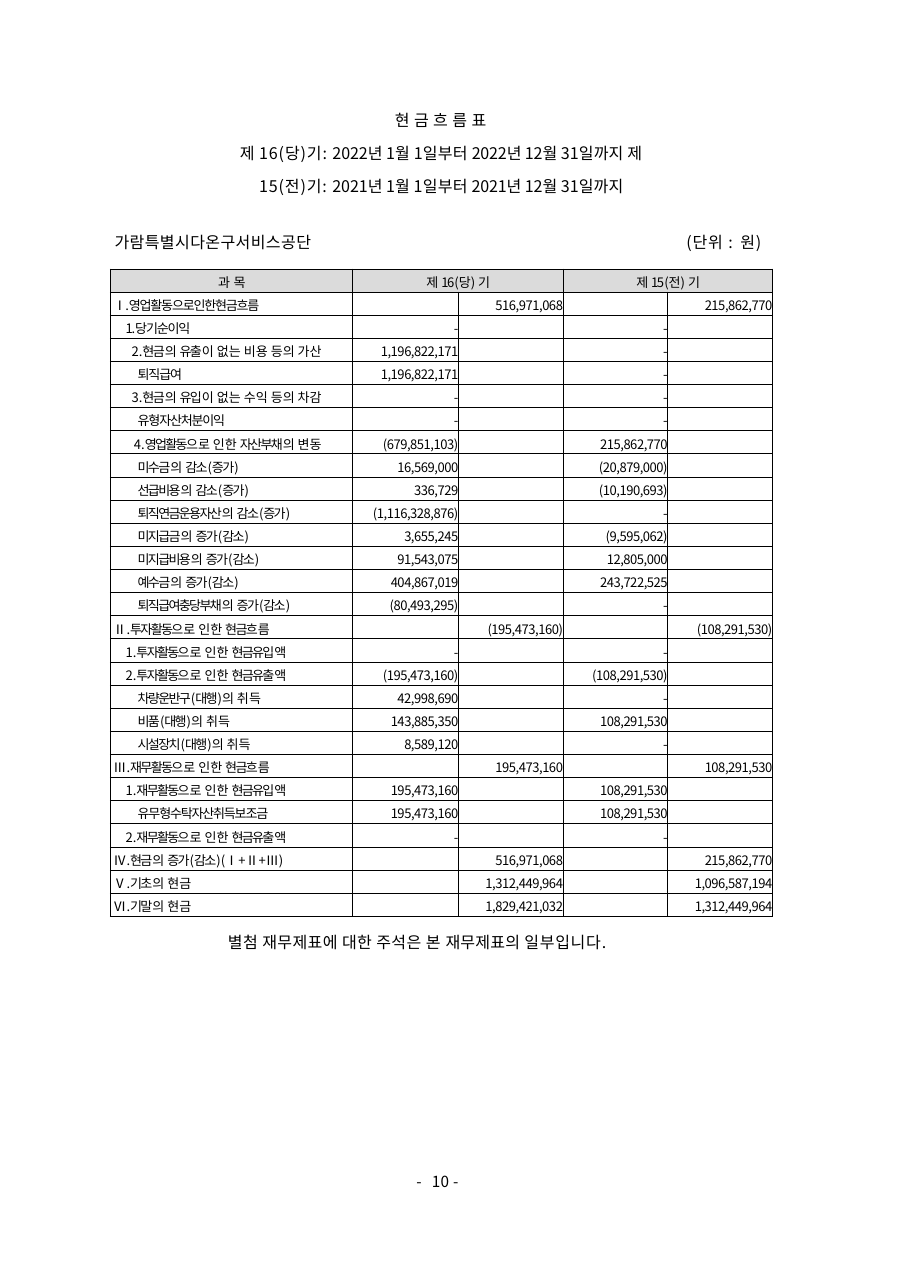
from lxml.etree import SubElement
from pptx import Presentation
from pptx.dml.color import RGBColor
from pptx.enum.text import MSO_AUTO_SIZE, PP_ALIGN
from pptx.oxml import parse_xml
from pptx.oxml.ns import nsdecls, qn
from pptx.util import Inches, Pt

# Content: text runs are (text, letter spacing in points)
FONT = "Noto Sans CJK KR"
COLORS = {"ink": "000000", "head": "DBDBDB"}
TITLE = [("현 금 흐 름 표", 0.3)]
TERMS = [
    ("제 ", 0.3), ("16(당)기: ", 0.6), ("2022년 ", 0), ("1월 ", 0.1),
    ("1일부터 ", 0.2), ("2022년 ", -0.1), ("12월 ", 0), ("31일까지 ", 0.1),
    ("제 ", 0.3), ("15(전)기: ", 0.6), ("2021년 ", 0), ("1월 ", 0.1),
    ("1일부터 ", 0.2), ("2021년 ", -0.1), ("12월 ", 0), ("31일까지", 0.1),
]
OWNER = [("가람특별시다온구서비스공단", 0.3)]
UNIT = [("(단위 ", 0.6), (": ", 1.3), ("원)", 0.6)]
NOTE = [("별첨 재무제표에 대한 주석은 본 ", 0.3), ("재무제표의 ", 0.2), ("일부입니다.", 0.5)]
PAGE = [("- ", 2.2), ("10 ", 0.2), ("-", 2.2)]

# Table: a bar splits a label into separately spaced runs
HEADS = [(0, "과 목"), (1, "제 |1|6|(|당|) 기"), (3, "제 |1|5|(|전|) 기")]
# Level 0 heading, 1 item, 2 detail, "R" item set from the right; then this and last term
ROWS = [
    (0, "Ⅰ.영업활동으로인한현금흐름", "516,971,068", "215,862,770"),
    (1, "1.당기순이익", "-", "-"),
    ("R", "2|.|현|금|의 |유출|이 |없|는 |비|용 |등|의 |가|산", "1,196,822,171", "-"),
    (2, "퇴직급여", "1,196,822,171", "-"),
    ("R", "3|.|현|금|의 |유입|이 |없|는 |수|익 |등|의 |차|감", "-", "-"),
    (2, "유형자산처분이익", "-", "-"),
    ("R", "4|.|영|업|활동으|로 |인|한 |자|산|부채|의 |변|동", "(679,851,103)", "215,862,770"),
    (2, "미수|금|의 |감소|(|증가|)", "16,569,000", "(20,879,000)"),
    (2, "선급|비|용|의 |감|소|(|증|가|)", "336,729", "(10,190,693)"),
    (2, "퇴직|연|금운용|자|산|의 |감|소|(|증|가|)", "(1,116,328,876)", "-"),
    (2, "미지|급|금|의 |증|가|(|감|소|)", "3,655,245", "(9,595,062)"),
    (2, "미지|급|비용|의 |증|가|(|감|소|)", "91,543,075", "12,805,000"),
    (2, "예수|금|의 |증가|(|감소|)", "404,867,019", "243,722,525"),
    (2, "퇴직|급|여충당|부|채|의 |증|가|(|감|소|)", "(80,493,295)", "-"),
    (0, "Ⅱ|.|투|자활동으|로 |인|한 |현|금흐|름", "(195,473,160)", "(108,291,530)"),
    (1, "1|.|투|자|활동으|로 |인|한 |현|금|유입|액", "-", "-"),
    (1, "2|.|투|자|활동으|로 |인|한 |현|금|유출|액", "(195,473,160)", "(108,291,530)"),
    (2, "차량|운|반구|(|대행|)|의 |취|득", "42,998,690", "-"),
    (2, "비품|(|대행|)|의 |취|득", "143,885,350", "108,291,530"),
    (2, "시설|장|치|(|대|행|)|의 |취|득", "8,589,120", "-"),
    (0, "Ⅲ|.|재|무활동으|로 |인|한 |현|금흐|름", "195,473,160", "108,291,530"),
    (1, "1|.|재|무|활동으|로 |인|한 |현|금|유입|액", "195,473,160", "108,291,530"),
    (2, "유무형수탁자산취득보조금", "195,473,160", "108,291,530"),
    (1, "2|.|재|무|활동으|로 |인|한 |현|금|유출|액", "-", "-"),
    (0, "Ⅳ|.|현|금|의 |증|가|(|감|소|)|(|Ⅰ|+|Ⅱ|+|Ⅲ|)", "516,971,068", "215,862,770"),
    (0, "Ⅴ|.|기|초|의 |현|금", "1,312,449,964", "1,096,587,194"),
    (0, "Ⅵ|.|기|말|의 |현|금", "1,829,421,032", "1,312,449,964"),
]
WIDTHS = [2.2, 0.96, 0.95, 0.95, 0.95]
HIGH = 0.21
INDENT = {0: 0.03, 1: 0.14, 2: 0.25, "R": 0}
TRACK = {".": -0.4, "(": -0.2, ")": -0.1, "+": -1.4}
LEFT, MID, RIGHT = PP_ALIGN.LEFT, PP_ALIGN.CENTER, PP_ALIGN.RIGHT


def write(par, runs, size=10.5, align=LEFT, indent=0.01, before=None, line=None):
    par.alignment = align
    if before:
        par.space_before = Pt(before)
    if line:
        par.line_spacing = Pt(line)
    props = par._p.get_or_add_pPr()
    props.set("marL", str(Inches(indent)))
    props.set("indent", "0")
    for text, gap in runs:
        run = par.add_run()
        run.text = text
        run.font.size = Pt(size)
        run.font.name = FONT
        run.font.color.rgb = RGBColor.from_string(COLORS["ink"])
        mark = run._r.get_or_add_rPr()
        mark.set("spc", str(round(gap * 100)))
        SubElement(mark, qn("a:ea")).set("typeface", FONT)


def inset(part, top, right=0):
    part.margin_left = part.margin_bottom = 0
    part.margin_top, part.margin_right = Inches(top), Inches(right)


def box(slide, place, top=0.02):
    frame = slide.shapes.add_textbox(*map(Inches, place)).text_frame
    frame.word_wrap = True
    frame.auto_size = MSO_AUTO_SIZE.SHAPE_TO_FIT_TEXT
    inset(frame, top)
    return frame


def spaced(label):
    parts = label.split("|")
    if len(parts) == 1:
        return [(label, -0.8)]
    runs = []
    for part in parts[:-1]:
        gap = 0 if part.endswith(" ") else -0.9 if part.isdecimal() else TRACK.get(part, -1.1)
        runs.append((part, gap))
    return runs + [(parts[-1], 0)]


def frame_cell(cell):
    props = cell._tc.get_or_add_tcPr()
    for spot, side in enumerate("LRTB"):
        props.insert(spot, parse_xml(
            f'<a:ln{side} {nsdecls("a")} w="{Pt(0.5)}"><a:solidFill>'
            f'<a:srgbClr val="{COLORS["ink"]}"/></a:solidFill></a:ln{side}>'))


def build_table(slide):
    count = len(ROWS) + 1
    table = slide.shapes.add_table(
        count, len(WIDTHS), Inches(1), Inches(2.44),
        Inches(sum(WIDTHS)), Inches(HIGH * count)).table
    table.first_row = table.horz_banding = False
    for col, wide in zip(table.columns, WIDTHS):
        col.width = Inches(wide)

    # Cell base: height, fill, borders, small empty lines
    for i, row in enumerate(table.rows):
        row.height = Inches(HIGH)
        for cell in row.cells:
            inset(cell, 0.03)
            if i:
                cell.fill.background()
            else:
                cell.fill.solid()
                cell.fill.fore_color.rgb = RGBColor.from_string(COLORS["head"])
            frame_cell(cell)
            end = SubElement(cell.text_frame.paragraphs[0]._p, qn("a:endParaRPr"))
            end.set("sz", "850")

    def fill(i, j, runs, **form):
        write(table.cell(i, j).text_frame.paragraphs[0], runs, size=8.5, before=2.4, **form)

    # Header
    for j, label in HEADS:
        if j:
            table.cell(0, j).merge(table.cell(0, j + 1))
        runs = spaced(label) if j else [(label, 0.2)]
        fill(0, j, runs, align=MID)

    # Body: headings use the outer column of each term
    for i, (level, label, now, past) in enumerate(ROWS, 1):
        if level == "R":
            inset(table.cell(i, 0), 0.03, 0.28)
        fill(i, 0, spaced(label), align=RIGHT if level == "R" else LEFT, indent=INDENT[level])
        first = 2 if level == 0 else 1
        for j, value in ((first, now), (first + 2, past)):
            fill(i, j, [(value, 0 if value == "-" else -0.3)], align=RIGHT, indent=0)


def main():
    deck = Presentation()
    deck.slide_width, deck.slide_height = Inches(8.26), Inches(11.69)
    slide = deck.slides.add_slide(deck.slide_layouts[6])

    # Page number
    write(box(slide, (3.77, 10.64, 0.5, 0.17), 0).paragraphs[0], PAGE, size=10, line=11.7)

    # Title and terms
    head = box(slide, (2.11, 0.88, 3.78, 0.89), 0.12)
    write(head.paragraphs[0], TITLE, align=MID, indent=0, before=8.5)
    write(head.add_paragraph(), TERMS, align=MID, line=21.6)

    # Single lines around the table
    for runs, place in (
        (OWNER, (1.03, 2.09, 1.98, 0.21)),
        (UNIT, (6.22, 2.09, 0.74, 0.21)),
        (NOTE, (2.06, 8.44, 3.83, 0.21)),
    ):
        write(box(slide, place).paragraphs[0], runs, before=1.3)

    build_table(slide)
    deck.save("out.pptx")


if __name__ == "__main__":
    main()
